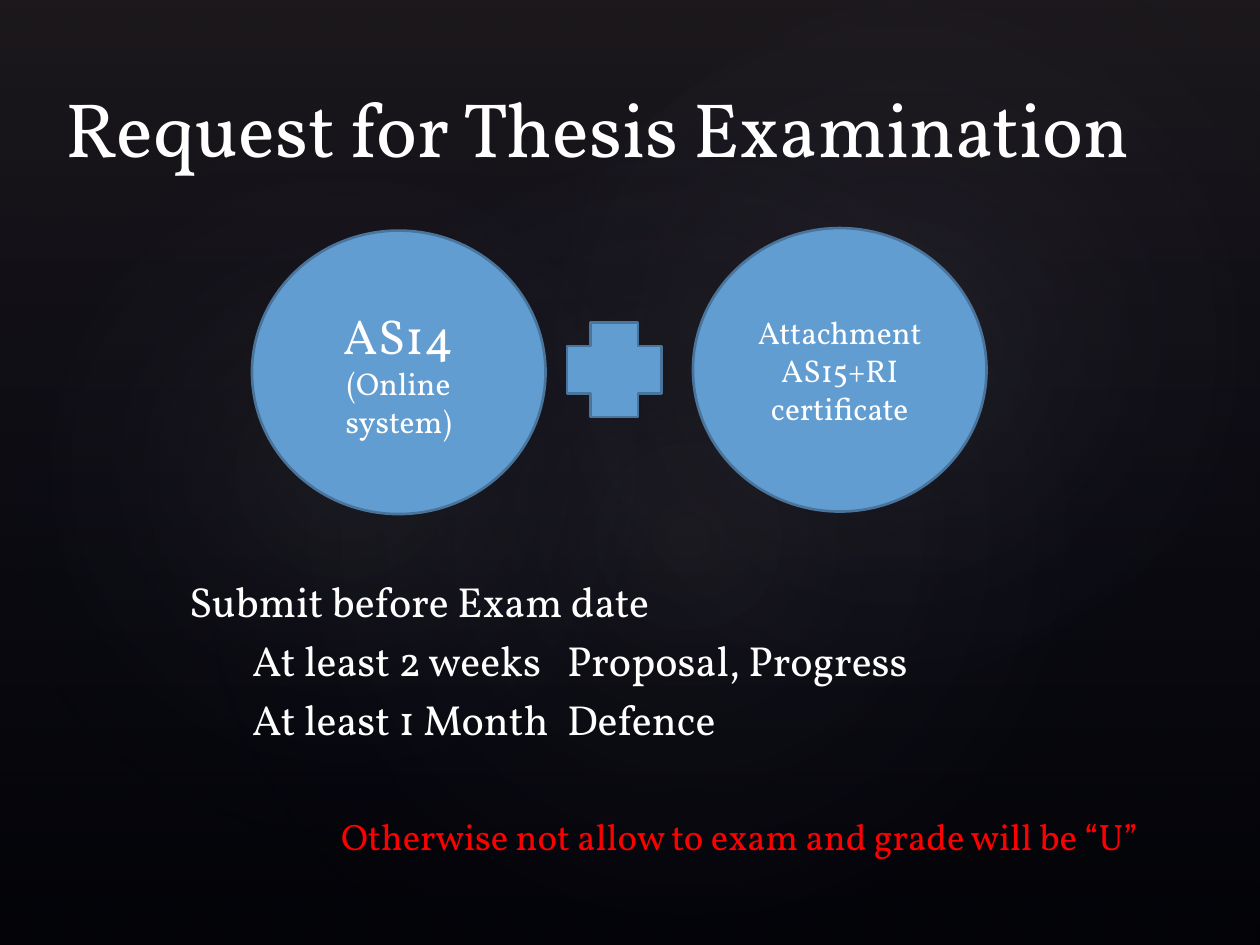
from dataclasses import dataclass
from lxml.etree import SubElement
from pptx import Presentation
from pptx.dml.color import RGBColor
from pptx.enum.shapes import MSO_SHAPE
from pptx.enum.text import MSO_ANCHOR, MSO_AUTO_SIZE, PP_ALIGN
from pptx.oxml.ns import qn
from pptx.util import Inches, Pt


@dataclass(frozen=True)
class Theme:
    font: str = "Vollkorn"
    back: str = "000000"
    text: str = "FFFFFF"
    alert: str = "FF0000"
    fill: str = "629DD1"
    edge: str = "49749B"
    haze: str = "504652"
    glow: str = "C4BCC6"
    navy: str = "242852"
    title: int = 44
    head: int = 28
    body: int = 24
    warn: int = 21
    small: int = 18


THEME = Theme()


def rgb(code):
    return RGBColor.from_string(code)


def place(shape, box):
    shape.left, shape.top, shape.width, shape.height = map(Inches, box)


def write(para, text, size=THEME.body, color=THEME.text,
          align=PP_ALIGN.LEFT, before=0):
    """Add a run to a paragraph and format both."""
    para.alignment = align
    para.space_before = Pt(before)
    run = para.add_run()
    run.text = text
    run.font.name = THEME.font
    run.font.size = Pt(size)
    run.font.color.rgb = rgb(color)


def add_form(slide, kind, box):
    shape = slide.shapes.add_shape(kind, *map(Inches, box))
    shape.shadow.inherit = False
    return shape


def fade(shape, stops, radial):
    """Fill with a gradient of (position, colour, opacity) stops in percent."""
    shape.fill.gradient()
    grad = shape.element.spPr.find(qn("a:gradFill"))
    for child in list(grad):
        grad.remove(child)
    group = SubElement(grad, qn("a:gsLst"))
    for pos, color, alpha in stops:
        stop = SubElement(group, qn("a:gs"), pos=str(pos * 1000))
        tint = SubElement(stop, qn("a:srgbClr"), val=color)
        SubElement(tint, qn("a:alpha"), val=str(alpha * 1000))
    if radial:
        path = SubElement(grad, qn("a:path"), path="circle")
        SubElement(path, qn("a:fillToRect"), dict.fromkeys("ltrb", "50000"))
    else:
        SubElement(grad, qn("a:lin"), ang="5400000", scaled="0")


def draw_back(slide, box):
    """Dark page with a haze and three soft glows behind everything."""
    x, y, w, h = box
    slide.background.fill.solid()
    slide.background.fill.fore_color.rgb = rgb(THEME.back)
    haze = add_form(slide, MSO_SHAPE.RECTANGLE, box)
    fade(haze, [(0, THEME.haze, 36), (100, THEME.navy, 10)], False)
    parts = [haze]
    for dx, dy, gw, gh, turn, alpha in (
            (1.5, 1.14, 7.92, 6.24, 328.7, 7),
            (-0.3, 1.28, 6.06, 4.9, 294.3, 8),
            (3.58, 0.13, 7.09, 5.2, 328.7, 8)):
        glow = add_form(slide, MSO_SHAPE.OVAL, (x + dx, y + dy, gw, gh))
        glow.rotation = turn
        fade(glow, [(0, THEME.glow, alpha), (58, THEME.navy, 0)], True)
        parts.append(glow)
    tree = slide.shapes.element
    for spot, part in enumerate(parts, 2):
        part.line.fill.background()
        tree.insert(spot, part.element)


def draw_title(slide, box):
    title = slide.shapes.title
    place(title, box)
    frame = title.text_frame
    frame.auto_size = MSO_AUTO_SIZE.NONE
    frame.vertical_anchor = MSO_ANCHOR.BOTTOM
    write(frame.paragraphs[0], "Request for Thesis Examination",
          size=THEME.title)


def draw_sum(slide, box):
    """Two circles with a plus sign between them."""
    x, y, w, h = box
    wide, high, cross = 2.33, 2.25, 0.75
    items = (
        (MSO_SHAPE.OVAL, (x, y + 0.02, wide, high),
         (("AS14\v", THEME.head), ("(Online system)", THEME.small))),
        (MSO_SHAPE.OVAL, (x + w - wide, y, wide, high),
         (("Attachment AS15+RI certificate", THEME.small),)),
        (MSO_SHAPE.CROSS, (x + 2.5, y + (high - cross) / 2, cross, cross), ()),
    )
    for kind, spot, runs in items:
        shape = add_form(slide, kind, spot)
        shape.fill.solid()
        shape.fill.fore_color.rgb = rgb(THEME.fill)
        shape.line.color.rgb = rgb(THEME.edge)
        shape.line.width = Pt(1.5)
        frame = shape.text_frame
        frame.word_wrap = True
        frame.vertical_anchor = MSO_ANCHOR.MIDDLE
        for text, size in runs:
            head, *rest = text.split("\v")
            write(frame.paragraphs[0], head, size=size, align=PP_ALIGN.CENTER)
            if rest:
                frame.paragraphs[0].add_line_break()


def draw_rules(slide, box):
    """Deadlines, and the warning under them."""
    body = slide.placeholders[1]
    place(body, box)
    frame = body.text_frame
    frame.auto_size = MSO_AUTO_SIZE.NONE
    frame.vertical_anchor = MSO_ANCHOR.MIDDLE
    lines = (
        ("Submit before Exam date", dict(before=4.8)),
        ("\tAt least 2 weeks\tProposal, Progress", dict(before=4.8)),
        ("\tAt least 1 Month\tDefence", dict(before=4.8)),
        ("Otherwise not allow to exam and grade will be “U”",
         dict(size=THEME.warn, color=THEME.alert, align=PP_ALIGN.RIGHT,
              before=40)),
    )
    for i, (text, style) in enumerate(lines):
        para = frame.add_paragraph() if i else frame.paragraphs[0]
        write(para, text, **style)
        props = para._p.get_or_add_pPr()
        props.set("marL", str(Inches(0.02)))
        props.set("indent", "0")
        SubElement(props, qn("a:buNone"))


def main():
    deck = Presentation()
    deck.slide_width, deck.slide_height = Inches(10), Inches(7.5)
    slide = deck.slides.add_slide(deck.slide_layouts[1])
    draw_back(slide, (0, 0, 10, 7.5))
    draw_rules(slide, (1.38, 4.19, 7.75, 3))
    draw_sum(slide, (2, 1.81, 5.83, 2.27))
    draw_title(slide, (0.42, 0.42, 9.33, 1))
    deck.save("out.pptx")


if __name__ == "__main__":
    main()
